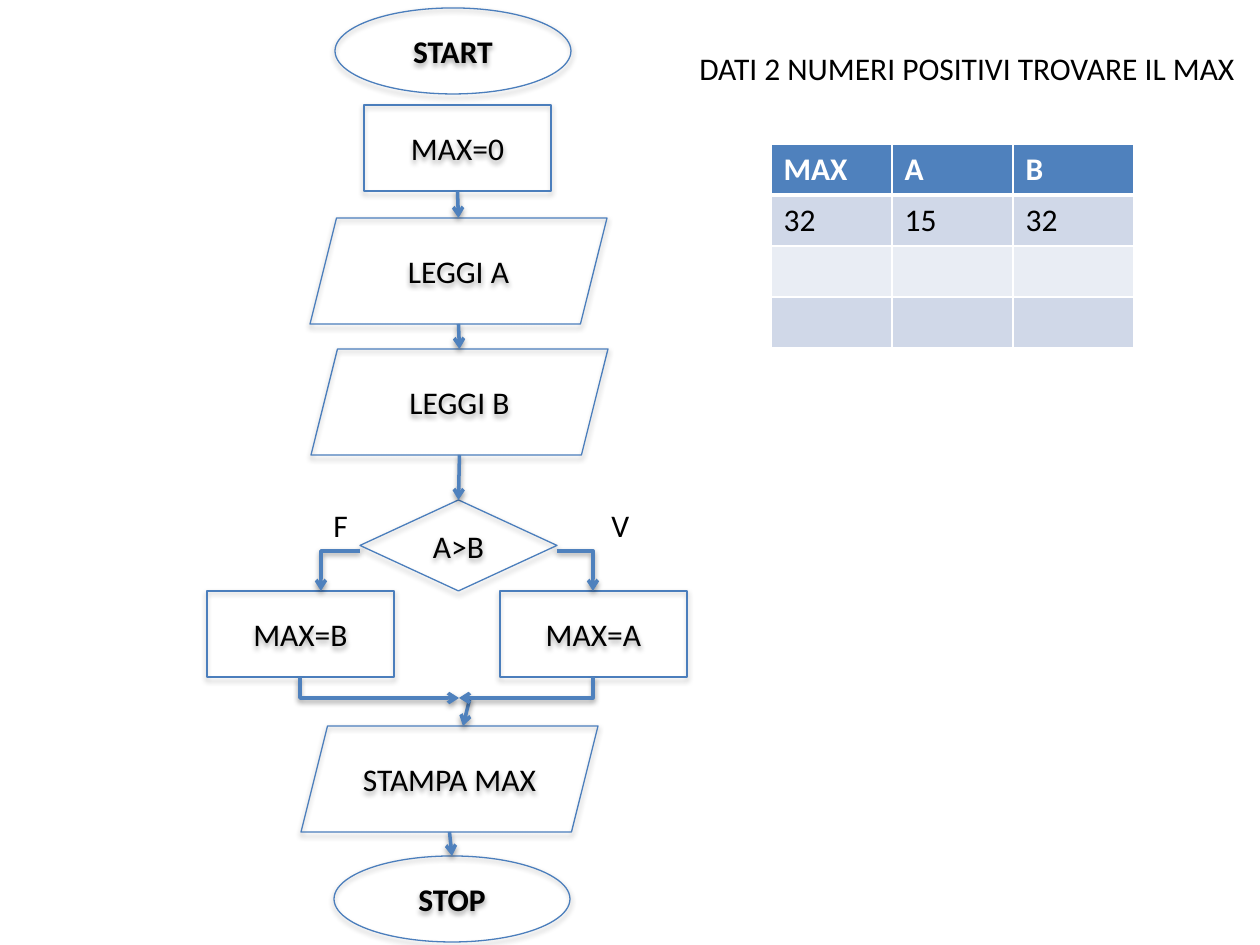
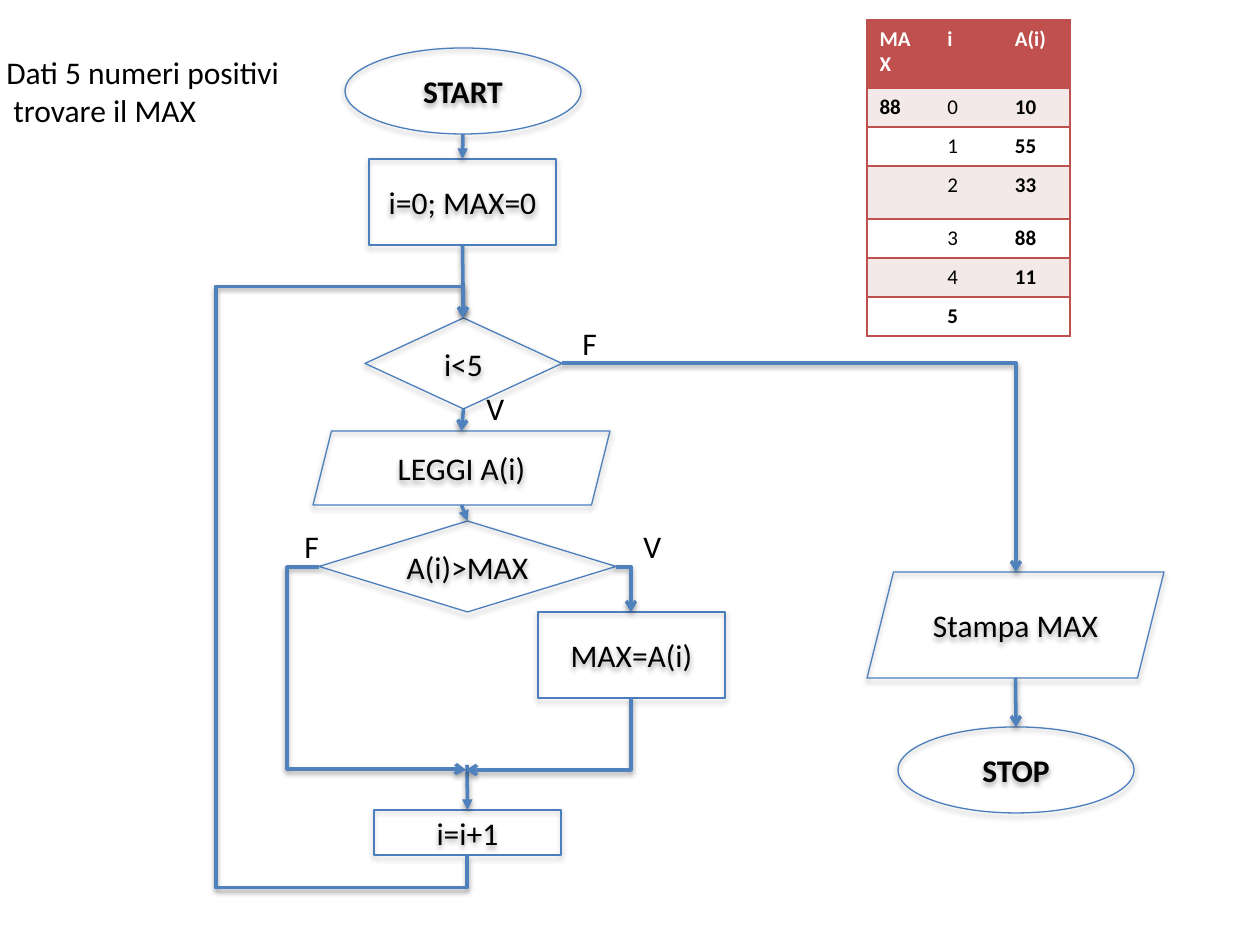
"""Two flowcharts that find a maximum, each with its trace table."""
from dataclasses import dataclass

from lxml import etree
from pptx import Presentation
from pptx import util as u
from pptx.dml.color import RGBColor
from pptx.enum import shapes, text
from pptx.oxml.ns import qn

OVAL, BOX, DATA, TEST = (
    shapes.MSO_SHAPE.OVAL, shapes.MSO_SHAPE.RECTANGLE,
    shapes.MSO_SHAPE.PARALLELOGRAM, shapes.MSO_SHAPE.DIAMOND)
NODE_SIZE = {OVAL: (236, 86), BOX: (187, 86), DATA: (297, 106), TEST: (197, 91)}

PAGES = [
    {
        "nodes": [
            ("START", OVAL, 335, 8), ("MAX=0", BOX, 364, 105),
            ("LEGGI A", DATA, 310, 218), ("LEGGI B", DATA, 311, 349),
            ("A>B", TEST, 360, 500), ("MAX=B", BOX, 207, 591),
            ("MAX=A", BOX, 500, 591), ("STAMPA MAX", DATA, 301, 726),
            ("STOP", OVAL, 334, 856)],
        "arrows": [
            ("MAX=0", "LEGGI A", "arrow"), ("LEGGI A", "LEGGI B", "arrow"),
            ("LEGGI B", "A>B", "arrow"), ((470, 698), (463, 726), "arrow"),
            ("STAMPA MAX", "STOP", "arrow")],
        "elbows": [
            [(557, 551), (593, 551), (593, 591)],
            [(360, 551), (321, 551), (321, 591)],
            [(593, 677), (593, 698), (459, 698)],
            [(300, 677), (300, 698), (459, 698)]],
        "labels": [
            (["F"], 321, 500, 40), (["V"], 599, 500, 44),
            (["DATI 2 NUMERI POSITIVI TROVARE IL MAX"], 687, 43, 566)],
        "table": {
            "rows": [("MAX", "A", "B"), ("32", "15", "32"), ("",) * 3, ("",) * 3],
            "regular": ("32", "15"), "place": (771, 144, 363),
            "heights": [51] * 4, "look": "blue"},
    },
    {
        "nodes": [
            ("START", OVAL, 345, 48), ("i=0; MAX=0", BOX, 369, 159),
            ("i<5", TEST, 365, 318), ("LEGGI A(i)", DATA, 313, 431, 297, 74),
            ("A(i)>MAX", TEST, 319, 521, 297, 91), ("MAX=A(i)", BOX, 538, 612),
            ("i=i+1", BOX, 374, 810, 187, 45), ("Stampa MAX", DATA, 867, 572),
            ("STOP", OVAL, 898, 727)],
        "arrows": [
            ("START", "i=0; MAX=0", "triangle"), ("i=0; MAX=0", "i<5", "triangle"),
            ("i<5", "LEGGI A(i)", "arrow"), ("LEGGI A(i)", "A(i)>MAX", "triangle"),
            ((467, 765), "i=i+1", "triangle"), ("Stampa MAX", "STOP", "arrow")],
        "elbows": [
            [(616, 567), (631, 567), (631, 612)],
            [(319, 567), (287, 567), (287, 769), (466, 769), (466, 770)],
            [(631, 698), (631, 770), (466, 770)],
            [(467, 856), (467, 888), (217, 888), (217, 286), (463, 286), (463, 318)],
            [(562, 363), (1016, 363), (1016, 572)]],
        "labels": [
            (["F"], 292, 521, 40), (["V"], 631, 521, 44),
            (["V"], 474, 383, 44), (["F"], 570, 318, 40),
            (["Dati 5 numeri positivi", " trovare il MAX"], -6, 47, 302)],
        "table": {
            "rows": [("MAX", "i", "A(i)"), ("88", "0", "10"), ("", "1", "55"),
                     ("", "2", "33"), ("", "3", "88"), ("", "4", "11"), ("", "5", "")],
            "regular": ("0", "1", "2", "3", "4"), "place": (867, 20, 203),
            "heights": [68, 39, 39, 53, 39, 39, 39], "look": "red"},
    },
]


@dataclass(frozen=True)
class Theme:
    """Colours, type sizes and line widths."""
    font: str = "Calibri"
    body: int = 18
    ink: str = "000000"
    paper: str = "FFFFFF"
    outline: str = "4B7EBC"
    arrow: str = "4F81BD"
    outline_width: float = 0.75
    arrow_width: float = 2


THEME = Theme()
LOOKS = {
    "blue": {"head": "4F81BD", "bands": ("D0D8E8", "E9EDF4"), "rule": "FFFFFF",
             "size": 18, "inner": True, "head_rule": 3},
    "red": {"head": "C0504D", "bands": ("F4E9E9", "FFFFFF"), "rule": "C0504D",
            "size": 12, "inner": False, "head_rule": 1},
}
NODE_SHADOW = {"dist": 23000, "alpha": 35000}
ARROW_SHADOW = {"dist": 20000, "alpha": 38000}
NO_TABLE_STYLE = "{2D5ABB26-0587-4C30-8999-92F81FD0307C}"
SCALE = u.Inches(1) / 126


def px(*lengths):
    """Turn pixel lengths into EMU."""
    return [round(length * SCALE) for length in lengths]


def add_xml(parent, tag, **values):
    """Append a drawing element with attributes."""
    return etree.SubElement(parent, qn(tag), {k: str(v) for k, v in values.items()})


def assign(target, values):
    """Set attributes from a dict."""
    for name, value in values.items():
        setattr(target, name, value)


def write(frame, lines, size=THEME.body, color=THEME.ink, bold=False, align=None):
    """Fill a text frame, one paragraph a line."""
    for index, line in enumerate(lines):
        para = frame.add_paragraph() if index else frame.paragraphs[0]
        para.alignment = align
        if not line:
            add_xml(para._p, "a:endParaRPr", sz=size * 100)
            continue
        span = para.add_run()
        span.text = line
        assign(span.font, {"name": THEME.font, "size": u.Pt(size), "bold": bold})
        span.font.color.rgb = RGBColor.from_string(color)


def stroke(shape, color, width):
    """Colour and size an outline."""
    shape.line.color.rgb = RGBColor.from_string(color)
    shape.line.width = u.Pt(width)


def cast_shadow(properties, dist, alpha):
    """Give a shape a soft shadow below it."""
    for effects in properties.findall(qn("a:effectLst")):
        properties.remove(effects)
    shadow = add_xml(add_xml(properties, "a:effectLst"), "a:outerShdw", blurRad=40000,
                     dist=dist, dir=5400000, rotWithShape=0)
    add_xml(add_xml(shadow, "a:srgbClr", val=THEME.ink), "a:alpha", val=alpha)


def add_node(page, label, kind, left, top, *size):
    """Draw one flowchart step."""
    node = page.shapes.add_shape(kind, *px(left, top, *(size or NODE_SIZE[kind])))
    node.fill.background()
    stroke(node, THEME.outline, THEME.outline_width)
    cast_shadow(node._element.spPr, **NODE_SHADOW)
    assign(node.text_frame, {"word_wrap": True, "margin_left": 0, "margin_right": 0,
                             "vertical_anchor": text.MSO_ANCHOR.MIDDLE})
    write(node.text_frame, [label], bold=kind == OVAL, align=text.PP_ALIGN.CENTER)
    return node


def finish_arrow(arrow, head):
    """Style a connector and give it a head."""
    stroke(arrow, THEME.arrow, THEME.arrow_width)
    add_xml(arrow.line._get_or_add_ln(), "a:tailEnd", type=head)
    cast_shadow(arrow._element.spPr, **ARROW_SHADOW)


def add_arrow(page, nodes, start, end, head):
    """Draw a straight arrow from a step's bottom to a step's top."""
    source, target = nodes.get(start), nodes.get(end)
    begin = (source.left + source.width // 2, source.top + source.height) if source else px(*start)
    finish = (target.left + target.width // 2, target.top) if target else px(*end)
    arrow = page.shapes.add_connector(shapes.MSO_CONNECTOR.STRAIGHT, *begin, *finish)
    if source and source.auto_shape_type in (BOX, TEST):
        arrow.begin_connect(source, 2)
    if target and target.auto_shape_type in (BOX, TEST):
        arrow.end_connect(target, 0)
    finish_arrow(arrow, head)


def add_elbow(page, points):
    """Draw a bent arrow through the points, turned a quarter if it starts vertically."""
    (x1, y1), (x2, y2) = points[0], points[-1]
    dx, dy = x2 - x1, y2 - y1
    upright = points[1][0] == x1
    ends = (x1, y1, x2, y2)
    if upright:
        mid_x, mid_y = (x1 + x2) / 2, (y1 + y2) / 2
        ends = (mid_x - dy / 2, mid_y + dx / 2, mid_x + dy / 2, mid_y - dx / 2)
    elbow = page.shapes.add_connector(shapes.MSO_CONNECTOR.ELBOW, *px(*ends))
    properties = elbow._element.spPr
    if upright:
        properties.find(qn("a:xfrm")).set("rot", "5400000")
    bends = len(points) - 1
    geometry = properties.find(qn("a:prstGeom"))
    geometry.set("prst", f"bentConnector{bends}")
    guides = geometry.find(qn("a:avLst"))
    for index in range(1, bends - 1):
        x, y = points[index]
        along_y = upright == (index % 2 == 1)
        share = (y - y1) / dy if along_y else (x - x1) / dx
        add_xml(guides, "a:gd", name=f"adj{index}", fmla=f"val {round(share * 100000)}")
    finish_arrow(elbow, "arrow")


def add_label(page, lines, left, top, width):
    """Place free text."""
    box = page.shapes.add_textbox(*px(left, top, width, 12 + 38 * len(lines)))
    assign(box.text_frame, {"word_wrap": False,
                            "auto_size": text.MSO_AUTO_SIZE.SHAPE_TO_FIT_TEXT})
    write(box.text_frame, lines)


def add_border(cell, side, color, width):
    """Rule one side of a cell."""
    line = add_xml(cell._tc.get_or_add_tcPr(), f"a:ln{side}", w=u.Pt(width))
    add_xml(add_xml(line, "a:solidFill"), "a:srgbClr", val=color)


def add_trace(page, rows, regular, place, heights, look):
    """Draw the table of variable values."""
    look = LOOKS[look]
    columns = len(rows[0])
    frame = page.shapes.add_table(len(rows), columns, *px(*place, sum(heights)))
    frame._element.find(".//" + qn("a:tableStyleId")).text = NO_TABLE_STYLE
    table = frame.table
    for row, height in zip(table.rows, heights):
        row.height = px(height)[0]
    for r, values in enumerate(rows):
        for c, value in enumerate(values):
            cell = table.cell(r, c)
            widths = {"L": look["inner"] or c == 0, "R": look["inner"] or c == columns - 1,
                      "T": look["head_rule"] if r == 1 else 1,
                      "B": look["head_rule"] if r == 0 else 1}
            for side, width in widths.items():
                if width:
                    add_border(cell, side, look["rule"], int(width))
            cell.fill.solid()
            shade = look["bands"][(r - 1) % 2] if r else look["head"]
            cell.fill.fore_color.rgb = RGBColor.from_string(shade)
            write(cell.text_frame, [value], look["size"], THEME.ink if r else THEME.paper,
                  bold=r == 0 or value not in regular)


def main():
    """Build both pages and save the deck."""
    deck = Presentation()
    deck.slide_width, deck.slide_height = px(1260, 945)
    for content in PAGES:
        page = deck.slides.add_slide(deck.slide_layouts[6])
        nodes = {node[0]: add_node(page, *node) for node in content["nodes"]}
        for arrow in content["arrows"]:
            add_arrow(page, nodes, *arrow)
        for points in content["elbows"]:
            add_elbow(page, points)
        for label in content["labels"]:
            add_label(page, *label)
        add_trace(page, **content["table"])
    deck.save("out.pptx")


if __name__ == "__main__":
    main()
